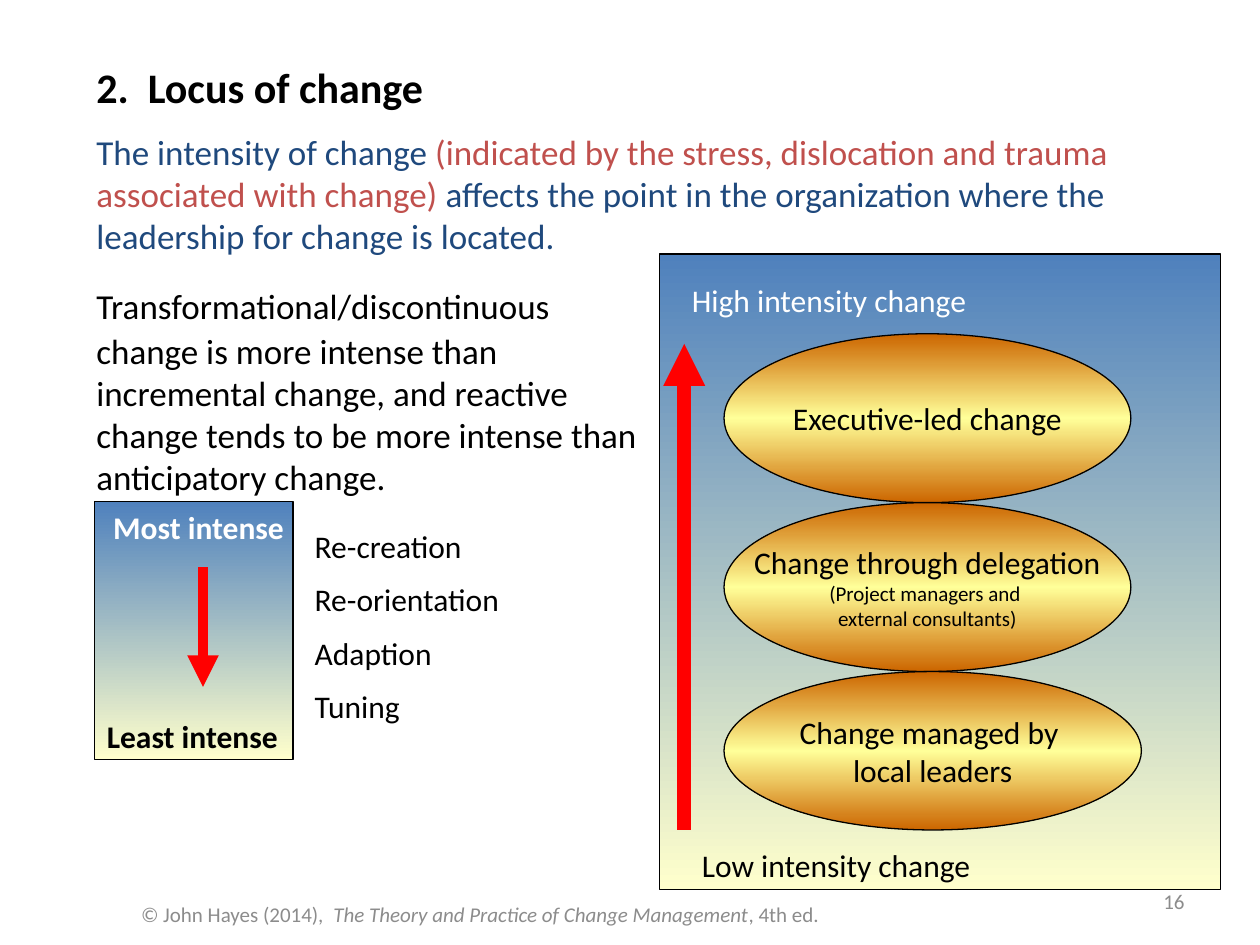
from lxml.etree import SubElement
from pptx import Presentation
from pptx.dml.color import RGBColor
from pptx.enum.shapes import MSO_CONNECTOR, MSO_SHAPE
from pptx.enum.text import MSO_ANCHOR, MSO_AUTO_SIZE, PP_ALIGN
from pptx.oxml.ns import qn
from pptx.util import Pt

BLACK = RGBColor(0x00, 0x00, 0x00)
WHITE = RGBColor(0xFF, 0xFF, 0xFF)
GRAY = RGBColor(0x8C, 0x8C, 0x8C)
NAVY = RGBColor(0x1F, 0x49, 0x7D)
BRICK = RGBColor(0xC0, 0x50, 0x4D)
RED = RGBColor(0xFF, 0x00, 0x00)
BLUE = RGBColor(0x4F, 0x81, 0xBD)
CREAM = RGBColor(0xFF, 0xFF, 0xCC)
ORANGE = RGBColor(0xCC, 0x66, 0x00)
YELLOW = RGBColor(0xFF, 0xFF, 0x99)

PANEL_COLORS = [BLUE, CREAM]
OVAL_COLORS = [ORANGE, YELLOW, ORANGE]

TITLE = "2.  Locus of change"
INTRO = [
    ("The intensity of change ", NAVY),
    ("(indicated by the stress, dislocation and trauma associated with change)", BRICK),
    (" affects the point in the organization where the leadership for change is located.", NAVY),
]
EXPLANATION = (
    "Transformational/discontinuous change is more intense than incremental change, "
    "and reactive change tends to be more intense than anticipatory change."
)
CHANGE_TYPES = ["Re-creation", "Re-orientation", "Adaption", "Tuning"]
# Width, height and (line, size) pairs, from high to low intensity
LEADERSHIP = [
    (232.5, 96.5, [("Executive-led change", 18)]),
    (232.5, 96.5, [("Change through delegation", 18), ("(Project managers and ", 12),
                   ("external consultants)", 12)]),
    (238.5, 90.5, [("Change managed by ", 18), ("local leaders", 18)]),
]
OVAL_LEFT, OVAL_TOP = 413.75, 190.75
CITATION = [
    ("© John Hayes (2014),  ", False),
    ("The Theory and Practice of Change Management", True),
    (", 4th ed.", False),
]
SLIDE_NUMBER = "16"


def style(paragraph, size, color=None, bold=False, align=PP_ALIGN.LEFT):
    paragraph.alignment = align
    font = paragraph.font
    font.name, font.size, font.bold = "Calibri", Pt(size), bold
    if color is not None:
        font.color.rgb = color


def add_text(slide, box, lines, size, color=None, bold=False, align=PP_ALIGN.LEFT,
             anchor=MSO_ANCHOR.TOP, gap=0):
    """Add a text box with one paragraph per line and return its paragraphs."""
    frame = slide.shapes.add_textbox(*map(Pt, box)).text_frame
    frame.word_wrap = True
    frame.auto_size = MSO_AUTO_SIZE.NONE
    frame.vertical_anchor = anchor
    frame.text = "\n".join(lines)
    for paragraph in frame.paragraphs:
        style(paragraph, size, color, bold, align)
        paragraph.space_after = Pt(gap)
    return frame.paragraphs


def add_gradient_shape(slide, kind, box, colors):
    """Add an outlined shape whose colors run evenly from top to bottom."""
    shape = slide.shapes.add_shape(kind, *map(Pt, box))
    shape.shadow.inherit = False
    shape.line.color.rgb = BLACK
    shape.line.width = Pt(0.75)
    shape.fill.gradient()
    gradient = shape.fill._xPr.find(qn("a:gradFill"))
    stops = gradient.find(qn("a:gsLst"))
    for stop in list(stops):
        stops.remove(stop)
    for i, color in enumerate(colors):
        stop = SubElement(stops, qn("a:gs"), pos=str(100000 * i // (len(colors) - 1)))
        SubElement(stop, qn("a:srgbClr"), val=str(color))
    direction = gradient.find(qn("a:lin"))
    direction.set("ang", "5400000")
    direction.set("scaled", "0")
    return shape


def add_vertical_arrow(slide, x, start, end, width):
    arrow = slide.shapes.add_connector(
        MSO_CONNECTOR.STRAIGHT, Pt(x), Pt(start), Pt(x), Pt(end))
    arrow.line.color.rgb = RED
    arrow.line.width = Pt(width)
    SubElement(arrow.line._get_or_add_ln(), qn("a:tailEnd"), type="triangle")
    SubElement(arrow._element.spPr, qn("a:effectLst"))


def add_heading(slide):
    add_text(slide, (48, 31.75, 601, 36), [TITLE], 24, BLACK, bold=True)
    intro = add_text(slide, (48, 71.25, 641.5, 80), [""], 20)[0]
    for text, color in INTRO:
        run = intro.add_run()
        run.text = text
        run.font.color.rgb = color


def add_leadership_panel(slide):
    add_gradient_shape(slide, MSO_SHAPE.RECTANGLE, (377, 145.25, 320.5, 363), PANEL_COLORS)
    add_vertical_arrow(slide, 391, 474.25, 196.5, 8)
    add_text(slide, (394, 479.75, 204, 29), ["Low intensity change"], 18, BLACK)
    add_text(slide, (388.25, 156.75, 249, 29), ["High intensity change"], 18, WHITE)
    top = OVAL_TOP
    for width, height, lines in LEADERSHIP:
        oval = add_gradient_shape(
            slide, MSO_SHAPE.OVAL, (OVAL_LEFT, top, width, height), OVAL_COLORS)
        frame = oval.text_frame
        frame.word_wrap = False
        frame.vertical_anchor = MSO_ANCHOR.MIDDLE
        frame.text = "\n".join(text for text, _ in lines)
        for paragraph, (_, size) in zip(frame.paragraphs, lines):
            style(paragraph, size, BLACK, align=PP_ALIGN.CENTER)
        top += height


def add_intensity_scale(slide):
    explanation = add_text(slide, (0, 151.25, 377, 138), [""], 20, BLACK)[0]
    properties = explanation._p.get_or_add_pPr()
    properties.set("marL", str(Pt(48)))
    properties.set("indent", str(Pt(-48)))
    # The larger tab makes the first line taller
    tab = explanation.add_run()
    tab.text = "\t"
    tab.font.name, tab.font.size = "Times New Roman", Pt(28)
    explanation.add_run().text = EXPLANATION

    add_gradient_shape(slide, MSO_SHAPE.RECTANGLE, (54, 286.5, 113.5, 147.5), PANEL_COLORS)
    add_vertical_arrow(slide, 116, 324, 392.5, 6)
    add_text(slide, (172.75, 297.5, 142, 127.5), CHANGE_TYPES, 18, BLACK, gap=9)
    add_text(slide, (54, 406, 119, 29), ["Least intense"], 18, BLACK, bold=True)
    add_text(slide, (54, 287, 119, 29), ["Most intense"], 18, WHITE, bold=True,
             align=PP_ALIGN.CENTER)


def add_footer(slide):
    add_text(slide, (516.25, 500.5, 167.75, 28.75), [SLIDE_NUMBER], 12, GRAY,
             align=PP_ALIGN.RIGHT, anchor=MSO_ANCHOR.MIDDLE)
    citation = add_text(slide, (73.5, 508.25, 550, 28.75), [""], 12, GRAY,
                        anchor=MSO_ANCHOR.MIDDLE)[0]
    for text, italic in CITATION:
        run = citation.add_run()
        run.text = text
        run.font.italic = italic


def main():
    presentation = Presentation()
    presentation.slide_width, presentation.slide_height = Pt(720), Pt(540)
    slide = presentation.slides.add_slide(presentation.slide_layouts[6])
    add_heading(slide)
    add_leadership_panel(slide)
    add_intensity_scale(slide)
    add_footer(slide)
    presentation.save("out.pptx")


if __name__ == "__main__":
    main()
